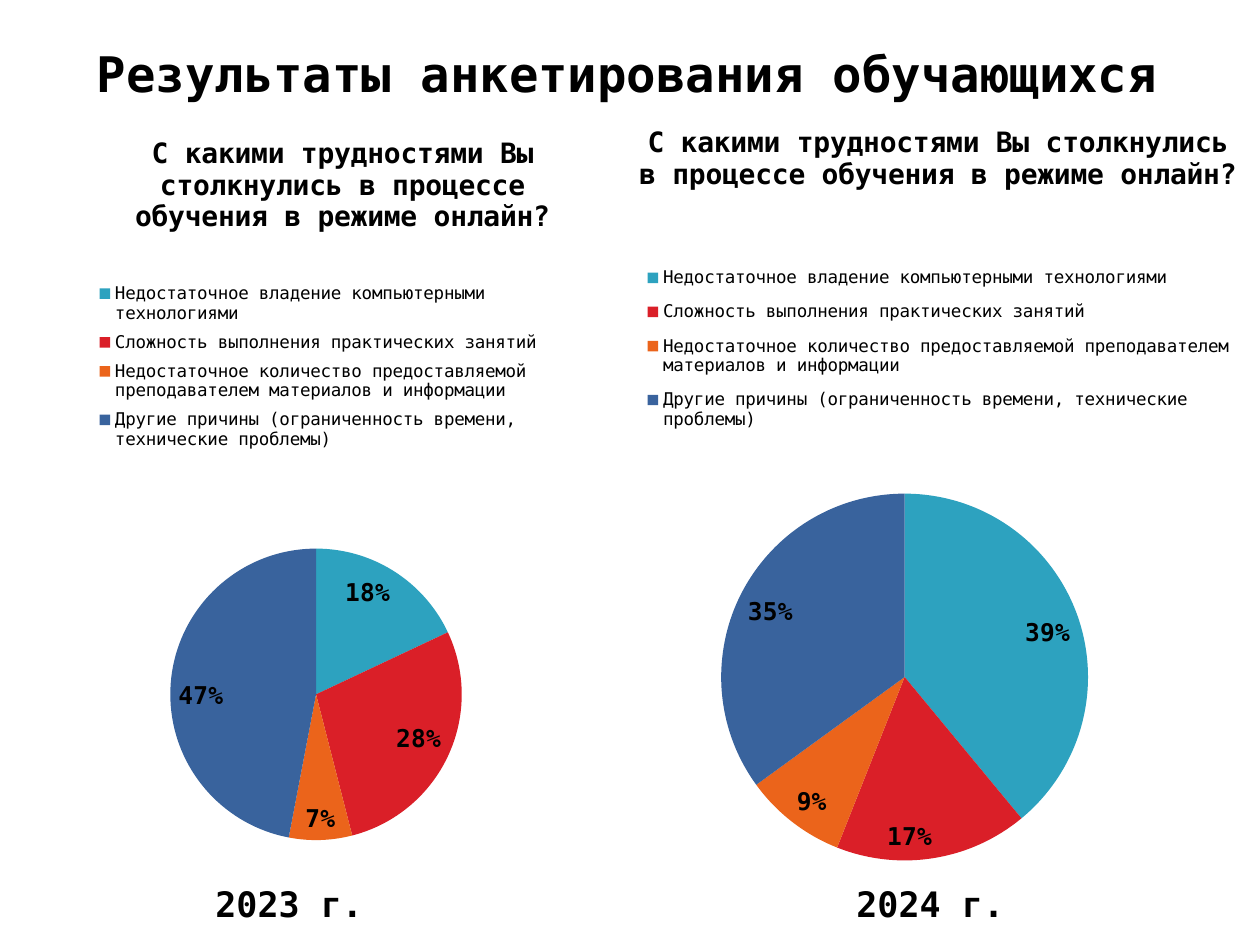
from lxml import etree
from pptx import Presentation
from pptx.chart.data import CategoryChartData
from pptx.dml.color import RGBColor
from pptx.enum.chart import XL_CHART_TYPE, XL_LABEL_POSITION, XL_LEGEND_POSITION
from pptx.enum.text import MSO_ANCHOR, PP_ALIGN
from pptx.oxml.ns import qn
from pptx.util import Emu, Pt

PIE = XL_CHART_TYPE.PIE
INSIDE_END = XL_LABEL_POSITION.INSIDE_END
LEGEND_TOP = XL_LEGEND_POSITION.TOP
MIDDLE, TOP = MSO_ANCHOR.MIDDLE, MSO_ANCHOR.TOP
CENTER, LEFT = PP_ALIGN.CENTER, PP_ALIGN.LEFT

EMU_PER_PX = 914400 / 126
FONT = "DejaVu Sans Mono"
BLACK = "000000"
SLICE_COLORS = ["2DA2BF", "DA1F28", "EB641B", "39639D"]
QUESTION = "С какими трудностями Вы столкнулись в процессе обучения в режиме онлайн?"
ANSWERS = [
    "Недостаточное владение компьютерными технологиями",
    "Сложность выполнения практических занятий",
    "Недостаточное количество предоставляемой преподавателем материалов и информации",
    "Другие причины (ограниченность времени, технические проблемы)",
]
PLOT_LAYOUT = (0.22, 0.458, 0.474, 0.486)

# chart box, legend layout as fractions of the chart, percentages, year box
SURVEYS = [
    ((551, 96, 774, 829), (0.11, 0.19, 0.78, 0.23), (39, 17, 9, 35),
     "2024 г.", (844, 876, 297, 69)),
    ((35, 107, 615, 838), (0.07, 0.2, 0.78, 0.22), (18, 28, 7, 47),
     "2023 г.", (203, 876, 297, 69)),
]


def px(value):
    return Emu(round(value * EMU_PER_PX))


def rgb(color):
    return RGBColor.from_string(color)


def set_font(font, size, bold=False):
    font.name = FONT
    font.size = Pt(size)
    font.bold = bold
    font.color.rgb = rgb(BLACK)


def add_text(slide, box, text, size, align=LEFT, anchor=TOP):
    tf = slide.shapes.add_textbox(*map(px, box)).text_frame
    tf.word_wrap = True
    tf.vertical_anchor = anchor
    tf.text = text
    p = tf.paragraphs[0]
    p.alignment = align
    set_font(p.runs[0].font, size, bold=True)


def set_layout(element, index, fractions, inner=False):
    """Give a chart part a manual layout, as fractions of the chart."""
    for old in element.findall(qn("c:layout")):
        element.remove(old)
    layout = etree.Element(qn("c:layout"))
    manual = etree.SubElement(layout, qn("c:manualLayout"))
    settings = [("layoutTarget", "inner")] if inner else []
    settings += [("xMode", "edge"), ("yMode", "edge")]
    settings += zip("xywh", map(str, fractions))
    for tag, value in settings:
        etree.SubElement(manual, qn(f"c:{tag}")).set("val", value)
    element.insert(index, layout)


def add_survey_pie(slide, box, legend_layout, percentages):
    data = CategoryChartData()
    data.categories = ANSWERS
    data.add_series("Series 1", percentages)
    chart = slide.shapes.add_chart(PIE, *map(px, box), data).chart
    set_font(chart.font, 18)

    chart.has_title = True
    tf = chart.chart_title.text_frame
    tf.text = QUESTION
    set_font(tf.paragraphs[0].runs[0].font, 16, bold=True)

    chart.has_legend = True
    legend = chart.legend
    legend.position = LEGEND_TOP
    legend.include_in_layout = False
    set_font(legend.font, 10)
    set_layout(legend._element, 1, legend_layout)

    plot = chart.plots[0]
    plot.vary_by_categories = True
    for i, color in enumerate(SLICE_COLORS):
        fill = plot.series[0].points[i].format.fill
        fill.solid()
        fill.fore_color.rgb = rgb(color)
    plot.has_data_labels = True
    labels = plot.data_labels
    labels.show_percentage = True
    labels.show_value = False
    labels.number_format = "0%"
    labels.number_format_is_linked = False
    labels.position = INSIDE_END
    set_font(labels.font, 14, bold=True)
    set_layout(chart._chartSpace.chart.plotArea, 0, PLOT_LAYOUT, inner=True)


def main():
    prs = Presentation()
    prs.slide_width, prs.slide_height = px(1260), px(945)
    slide = prs.slides.add_slide(prs.slide_layouts[6])
    add_text(slide, (69, 0, 1116, 145), "Результаты анкетирования обучающихся",
             28, CENTER, MIDDLE)
    for box, legend_layout, percentages, year, year_box in SURVEYS:
        add_survey_pie(slide, box, legend_layout, percentages)
        add_text(slide, year_box, year, 20)
    prs.save("out.pptx")


if __name__ == "__main__":
    main()
